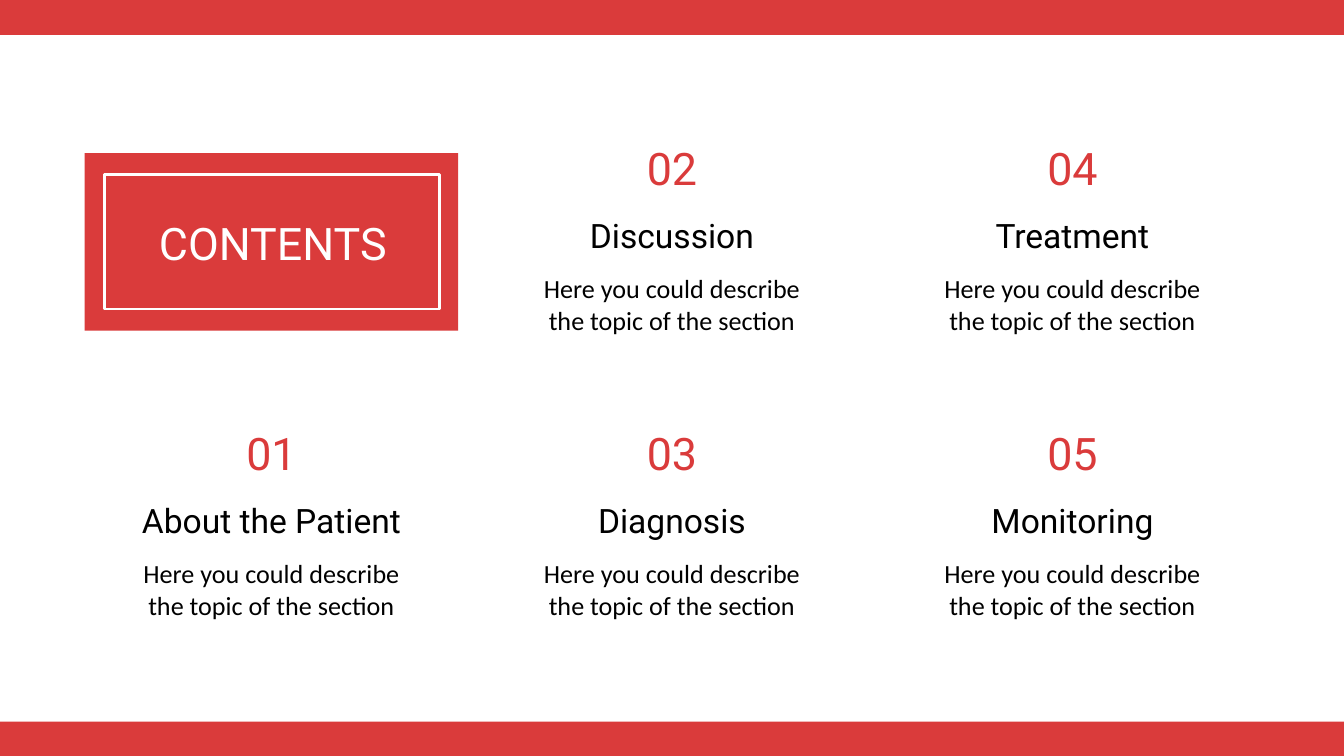
from dataclasses import dataclass

from pptx import Presentation
from pptx.dml.color import RGBColor
from pptx.enum.shapes import MSO_SHAPE
from pptx.enum.text import MSO_ANCHOR, MSO_AUTO_SIZE, PP_ALIGN
from pptx.shapes.autoshape import Shape
from pptx.slide import Slide
from pptx.util import Inches, Pt

RED, WHITE, BLACK = "DA3B3B", "FFFFFF", "000000"
BLURB = "Here you could describe the topic of the section"
WIDTH = 2.31
STEP_X, STEP_Y = 2.98, 2.12
LEFT = (10 - WIDTH) / 2 - STEP_X
TOP = 0.91


@dataclass(frozen=True)
class Box:
    left: float
    top: float
    width: float
    height: float

    def place(self) -> tuple[Inches, Inches, Inches, Inches]:
        return (Inches(self.left), Inches(self.top),
                Inches(self.width), Inches(self.height))


@dataclass(frozen=True)
class Style:
    size: int
    color: str
    font: str = "Roboto"
    anchor: MSO_ANCHOR = MSO_ANCHOR.MIDDLE


@dataclass(frozen=True)
class Topic:
    name: str
    col: int
    row: int


NUMBER = Style(24, RED)
HEADING = Style(18, BLACK, anchor=MSO_ANCHOR.BOTTOM)
BODY = Style(14, BLACK, "Calibri", MSO_ANCHOR.TOP)
TITLE = Style(24, WHITE)

BARS = [Box(-0.01, 5.37, 10.01, 0.26), Box(0, 0, 10.01, 0.26)]
TOPICS = [
    Topic("About the Patient", 0, 1),
    Topic("Discussion", 1, 0),
    Topic("Diagnosis", 1, 1),
    Topic("Treatment", 2, 0),
    Topic("Monitoring", 2, 1),
]


def rgb(code: str) -> RGBColor:
    return RGBColor.from_string(code)


def add_rect(slide: Slide, box: Box) -> Shape:
    rect = slide.shapes.add_shape(MSO_SHAPE.RECTANGLE, *box.place())
    rect.shadow.inherit = False
    rect.fill.solid()
    rect.fill.fore_color.rgb = rgb(RED)
    rect.line.fill.background()
    return rect


def add_frame(slide: Slide, box: Box) -> Shape:
    frame = add_rect(slide, box)
    frame.fill.background()
    frame.line.color.rgb = rgb(WHITE)
    frame.line.width = Pt(1.5)
    return frame


def write(shape: Shape, text: str, style: Style) -> None:
    frame = shape.text_frame
    frame.text = text
    frame.word_wrap = True
    frame.auto_size = MSO_AUTO_SIZE.NONE
    frame.vertical_anchor = style.anchor
    frame.margin_left = frame.margin_right = Inches(0.1)
    frame.margin_top = frame.margin_bottom = Inches(0.1)
    line = frame.paragraphs[0]
    line.alignment = PP_ALIGN.CENTER
    line.font.name = style.font
    line.font.size = Pt(style.size)
    line.font.color.rgb = rgb(style.color)


def add_text(slide: Slide, box: Box, text: str, style: Style) -> None:
    write(slide.shapes.add_textbox(*box.place()), text, style)


def add_topic(slide: Slide, order: int, topic: Topic) -> None:
    left = LEFT + topic.col * STEP_X
    top = TOP + topic.row * STEP_Y
    add_text(slide, Box(left, top + 0.41, WIDTH, 0.68), topic.name, HEADING)
    add_text(slide, Box(left, top + 1.02, WIDTH, 0.87), BLURB, BODY)
    add_text(slide, Box(left, top, WIDTH, 0.68), f"{order:02}", NUMBER)


def add_title(slide: Slide) -> None:
    add_rect(slide, Box(0.63, 1.14, 2.78, 1.32))
    frame = add_frame(slide, Box(0.78, 1.3, 2.49, 1))
    title = slide.shapes.title
    title.left, title.top, title.width, title.height = Box(
        0.28, 1.49, 3.5, 0.63).place()
    write(title, "CONTENTS", TITLE)
    frame.element.addnext(title.element)


def main() -> None:
    deck = Presentation()
    deck.slide_width, deck.slide_height = Inches(10), Inches(10 * 9 / 16)
    slide = deck.slides.add_slide(deck.slide_layouts[5])
    for bar in BARS:
        add_rect(slide, bar)
    add_title(slide)
    for order, topic in enumerate(TOPICS, 1):
        add_topic(slide, order, topic)
    deck.save("out.pptx")


if __name__ == "__main__":
    main()
